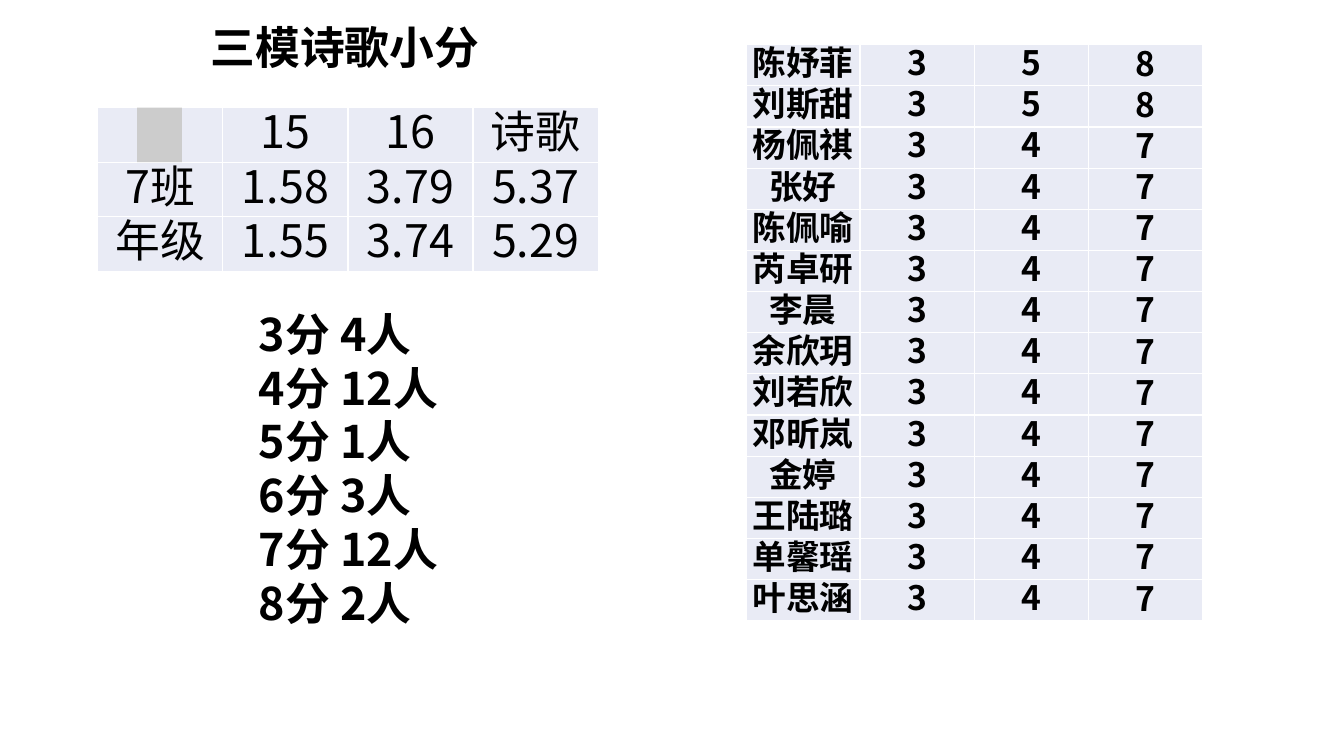
from dataclasses import dataclass

from lxml import etree
from pptx import Presentation
from pptx.dml.color import RGBColor
from pptx.enum.shapes import MSO_SHAPE
from pptx.enum.text import MSO_ANCHOR, PP_ALIGN
from pptx.oxml.ns import qn
from pptx.slide import Slide
from pptx.util import Pt

BLACK = RGBColor(0x00, 0x00, 0x00)
WHITE = RGBColor(0xFF, 0xFF, 0xFF)
CELL_FILL = RGBColor(0xE9, 0xEB, 0xF5)
GREY = RGBColor(0xCC, 0xCC, 0xCC)
CENTER = PP_ALIGN.CENTER
MIDDLE = MSO_ANCHOR.MIDDLE
BOTTOM = MSO_ANCHOR.BOTTOM
RECTANGLE = MSO_SHAPE.RECTANGLE

TITLE_FONT = "Noto Sans CJK JP"
BODY_FONT = "Noto Sans CJK SC"
LINE_RATIO = 1.2
CELL_INSET = 0.72


@dataclass(frozen=True)
class TextStyle:
    font: str
    size: float
    bold: bool


@dataclass(frozen=True)
class TextBlock:
    left: float
    top: float
    width: float
    height: float
    lines: list[str]
    style: TextStyle


@dataclass(frozen=True)
class ScoreTable:
    left: float
    top: float
    column_width: float
    row_height: float
    rows: list[list[str]]
    style: TextStyle
    last_anchor: MSO_ANCHOR


TITLE_STYLE = TextStyle(TITLE_FONT, 32, True)
COUNT_STYLE = TextStyle(BODY_FONT, 32, True)
AVERAGE_STYLE = TextStyle(BODY_FONT, 32, False)
STUDENT_STYLE = TextStyle(BODY_FONT, 24, True)

STUDENTS_WITH_8 = ["陈妤菲", "刘斯甜"]
STUDENTS_WITH_7 = [
    "杨佩祺", "张好", "陈佩喻", "芮卓研", "李晨", "余欣玥",
    "刘若欣", "邓昕岚", "金婷", "王陆璐", "单馨瑶", "叶思涵",
]
COUNTS = {3: 4, 4: 12, 5: 1, 6: 3, 7: 12, 8: 2}

BLOCKS = [
    TextBlock(143.3, 10.8, 289.4, 46.1, ["三模诗歌小分"], TITLE_STYLE),
    TextBlock(177.8, 215.4, 203.8, 238, [
        f"{score}分 {people}人" for score, people in COUNTS.items()
    ], COUNT_STYLE),
]
AVERAGES = ScoreTable(69.8, 77, 89.4, 38.9, [
    ["", "15", "16", "诗歌"],
    ["7班", "1.58", "3.79", "5.37"],
    ["年级", "1.55", "3.74", "5.29"],
], AVERAGE_STYLE, MIDDLE)
STUDENTS = ScoreTable(
    532.8, 31.9, 81.5, 29.42,
    [[name, "3", "5", "8"] for name in STUDENTS_WITH_8]
    + [[name, "3", "4", "7"] for name in STUDENTS_WITH_7],
    STUDENT_STYLE, BOTTOM,
)


def style_paragraph(para, style: TextStyle) -> None:
    para.line_spacing = Pt(style.size * LINE_RATIO)
    font = para.font
    font.name = style.font
    font.size = Pt(style.size)
    font.bold = style.bold
    font.color.rgb = BLACK
    defaults = para._p.pPr.find(qn("a:defRPr"))
    east_asian = etree.Element(qn("a:ea"), typeface=style.font)
    defaults.find(qn("a:latin")).addnext(east_asian)


def add_text_block(page: Slide, block: TextBlock) -> None:
    box = page.shapes.add_textbox(
        Pt(block.left), Pt(block.top), Pt(block.width), Pt(block.height)
    )
    frame = box.text_frame
    frame.word_wrap = True
    frame.text = "\n".join(block.lines)
    for para in frame.paragraphs:
        style_paragraph(para, block.style)


def add_white_borders(cell) -> None:
    properties = cell._tc.get_or_add_tcPr()
    for position, side in enumerate(("lnL", "lnR", "lnT", "lnB")):
        line = etree.Element(qn(f"a:{side}"), w=str(Pt(1)))
        fill = etree.SubElement(line, qn("a:solidFill"))
        etree.SubElement(fill, qn("a:srgbClr"), val=str(WHITE))
        properties.insert(position, line)


def add_score_table(page: Slide, scores: ScoreTable) -> None:
    row_count, column_count = len(scores.rows), len(scores.rows[0])
    table = page.shapes.add_table(
        row_count, column_count, Pt(scores.left), Pt(scores.top),
        Pt(scores.column_width * column_count), Pt(scores.row_height * row_count),
    ).table
    table.first_row = False
    table.horz_banding = False
    for column in table.columns:
        column.width = Pt(scores.column_width)
    for row, values in zip(table.rows, scores.rows):
        row.height = Pt(scores.row_height)
        for cell, value in zip(row.cells, values):
            cell.text = value
            cell.margin_left = cell.margin_right = Pt(CELL_INSET)
            cell.margin_top = cell.margin_bottom = Pt(0)
            cell.vertical_anchor = MIDDLE
            cell.fill.solid()
            cell.fill.fore_color.rgb = CELL_FILL
            add_white_borders(cell)
            para = cell.text_frame.paragraphs[0]
            para.alignment = CENTER
            style_paragraph(para, scores.style)
        row.cells[column_count - 1].vertical_anchor = scores.last_anchor


def add_corner_block(page: Slide) -> None:
    block = page.shapes.add_shape(RECTANGLE, Pt(97.9), Pt(77), Pt(32.1), Pt(38.9))
    block.shadow.inherit = False
    block.fill.solid()
    block.fill.fore_color.rgb = GREY
    block.line.fill.background()


def main() -> None:
    deck = Presentation()
    deck.slide_width, deck.slide_height = Pt(960), Pt(540)
    page = deck.slides.add_slide(deck.slide_layouts[6])
    for block in BLOCKS:
        add_text_block(page, block)
    for scores in (AVERAGES, STUDENTS):
        add_score_table(page, scores)
    add_corner_block(page)
    deck.save("out.pptx")


if __name__ == "__main__":
    main()
